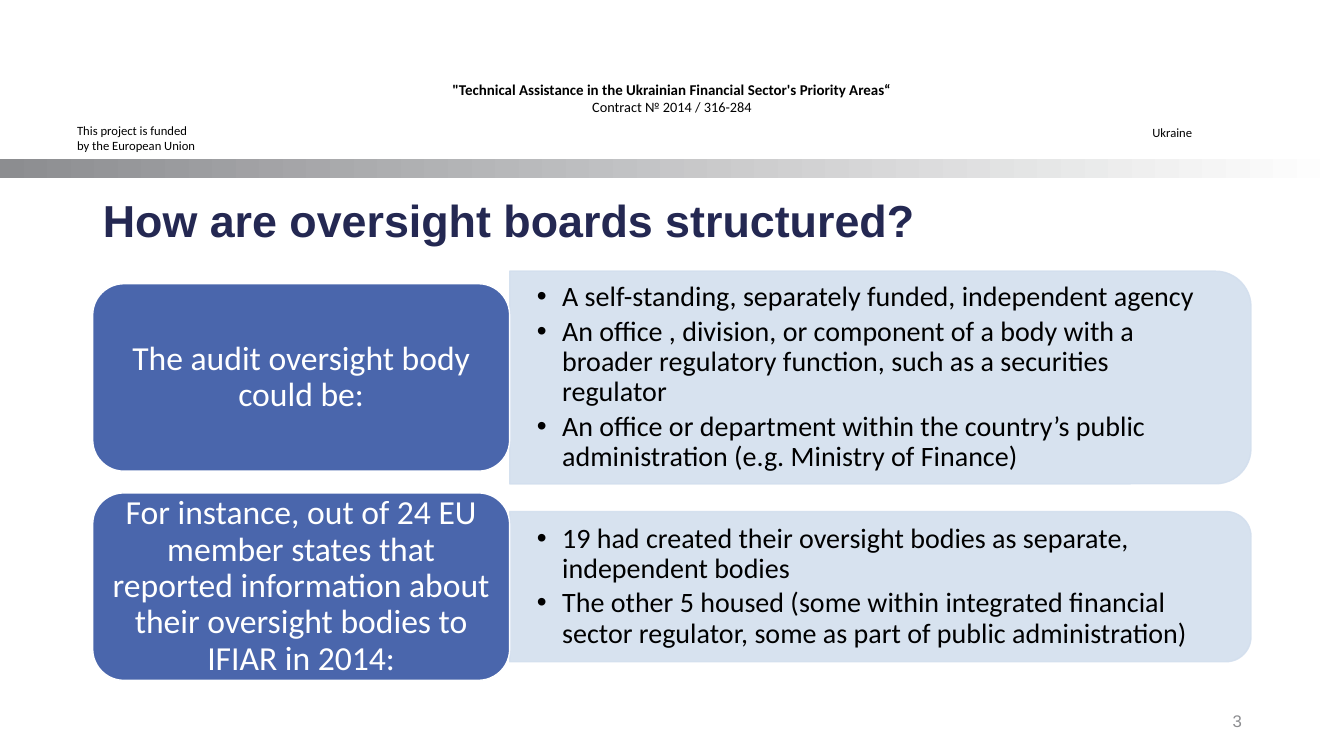
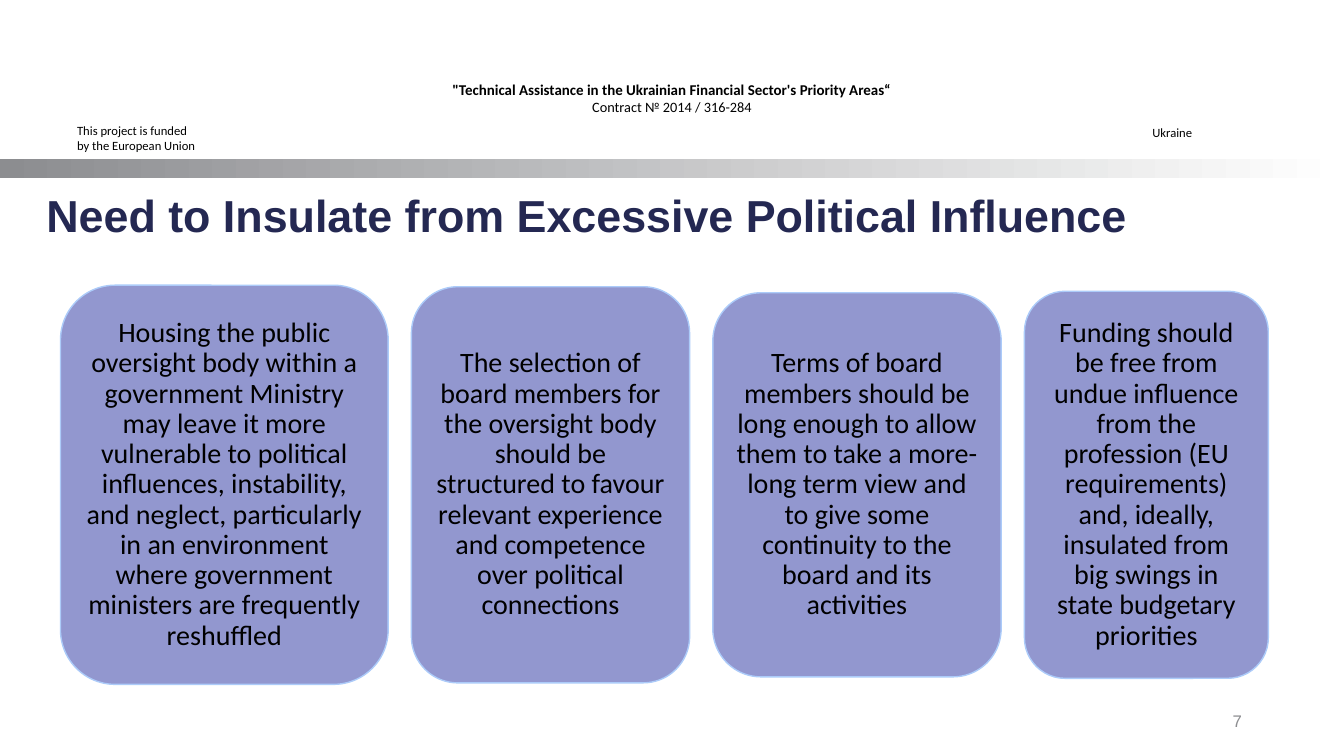
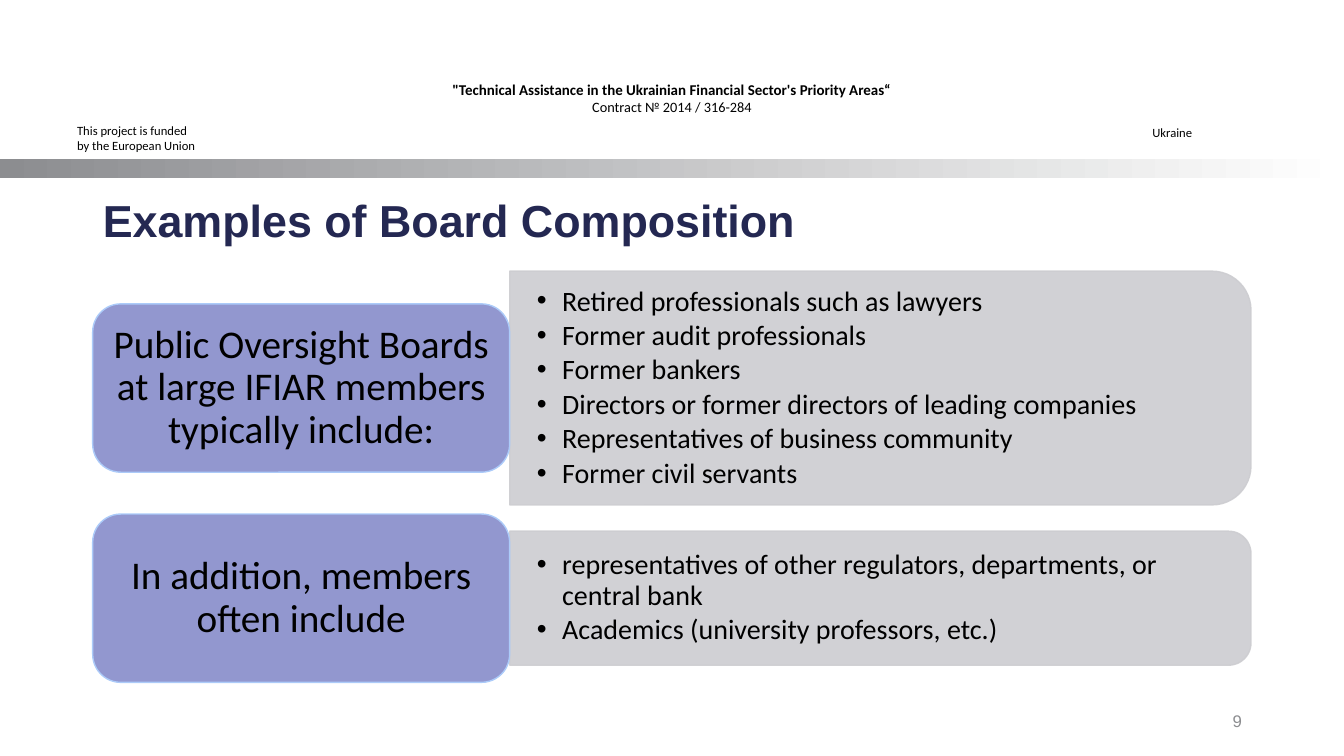
from dataclasses import dataclass

from lxml.etree import SubElement
from pptx import Presentation
from pptx.dml.color import RGBColor
from pptx.enum.shapes import MSO_SHAPE
from pptx.enum.text import MSO_ANCHOR, PP_ALIGN
from pptx.oxml.ns import qn
from pptx.util import Inches, Pt

SLIDE_WIDTH, SLIDE_HEIGHT = Inches(13.33), Inches(7.5)
COLORS = {
    "white": "FFFFFF", "black": "000000", "gray": "8C8D90", "navy": "242852",
    "blue": "4A66AC", "pale_blue": "D3DFEE", "violet": "9297CF",
    "sky": "ACCBF9", "silver": "CDCDD1",
}
STYLES = {
    "title": {"name": "Arial", "size": Pt(32), "bold": True, "color": "navy"},
    "number": {"name": "Arial", "size": Pt(12), "color": "gray"},
    "project": {"name": "Calibri", "size": Pt(10.7), "bold": True, "color": "black"},
    "contract": {"name": "Calibri", "size": Pt(10.2), "color": "black"},
    "note": {"name": "Calibri", "size": Pt(9), "color": "black"},
    "body": {"name": "Calibri", "size": Pt(20), "color": "black"},
    "label_white": {"name": "Calibri", "size": Pt(24), "color": "white"},
    "label_black": {"name": "Calibri", "size": Pt(28), "color": "black"},
}


@dataclass
class Box:
    """Hold a rectangle in percent of the slide's width and height."""
    left: float
    top: float
    width: float
    height: float

    def lengths(self):
        """Return left, top, width and height as slide lengths."""
        sides = (SLIDE_WIDTH, SLIDE_HEIGHT) * 2
        shares = (self.left, self.top, self.width, self.height)
        return [int(side * share / 100) for side, share in zip(sides, shares)]


DIAGRAM = Box(6.9, 35.87, 86.18, 54.27)
CARD_ROW = Box(4.5, 37.73, 89.87, 52.8)
TITLE = Box(6.9, 23.2, 86.25, 12.67)
HIGH_TITLE = Box(2.7, 22.53, 86.25, 12.67)


def rgb(name):
    """Return the named colour."""
    return RGBColor.from_string(COLORS[name])


def apply_formats(target, formats):
    """Set each attribute of the target from a dict."""
    for name, value in formats.items():
        if name == "color":
            target.color.rgb = rgb(value)
        else:
            setattr(target, name, value)


def set_frame(frame, anchor=MSO_ANCHOR.MIDDLE, across=0.1, down=0.05, right=None):
    """Set wrapping, anchor and margins of a text frame."""
    apply_formats(frame, {
        "word_wrap": True, "vertical_anchor": anchor,
        "margin_left": Inches(across), "margin_right": Inches(right or across),
        "margin_top": Inches(down), "margin_bottom": Inches(down),
    })


def write_lines(frame, lines, align=PP_ALIGN.LEFT, spacing=1.0, bullets=False):
    """Write one paragraph for each pair of text and style name."""
    for index, (text, style) in enumerate(lines):
        paragraph = frame.paragraphs[0] if index == 0 else frame.add_paragraph()
        if bullets:
            properties = paragraph._p.get_or_add_pPr()
            properties.set("marL", str(Inches(0.25)))
            properties.set("indent", str(-Inches(0.25)))
            SubElement(properties, qn("a:buFont")).set("typeface", "Arial")
            SubElement(properties, qn("a:buChar")).set("char", "•")
            if index:
                paragraph.space_before = Pt(3)
        apply_formats(paragraph, {"alignment": align, "line_spacing": spacing})
        run = paragraph.add_run()
        run.text = text
        apply_formats(run.font, STYLES[style])


def add_text(slide, box, lines, align=PP_ALIGN.LEFT, anchor=MSO_ANCHOR.TOP):
    """Add a plain text box."""
    frame = slide.shapes.add_textbox(*box.lengths()).text_frame
    set_frame(frame, anchor)
    write_lines(frame, lines, align)


def add_rounded(slide, box, text, style, fill, line, across=0.1, down=0.05):
    """Add a rounded rectangle with centred text."""
    shape = slide.shapes.add_shape(MSO_SHAPE.ROUNDED_RECTANGLE, *box.lengths())
    shape.shadow.inherit = False
    shape.fill.solid()
    shape.fill.fore_color.rgb = rgb(fill)
    apply_formats(shape.line, {"color": line, "width": Pt(1)})
    set_frame(shape.text_frame, across=across, down=down)
    write_lines(shape.text_frame, [(text, style)], PP_ALIGN.CENTER, 0.9)


def add_panel(slide, box, bullets, color):
    """Add a panel rounded on its right side, with a bulleted list on it."""
    left, top, width, height = box.lengths()
    shift = (width - height) // 2
    shape = slide.shapes.add_shape(MSO_SHAPE.ROUND_2_SAME_RECTANGLE,
                                   left + shift, top - shift, height, width)
    shape.rotation = 90
    shape.shadow.inherit = False
    shape.fill.solid()
    shape.fill.fore_color.rgb = rgb(color)
    apply_formats(shape.line, {"color": color, "width": Pt(1)})
    for tint in shape._element.spPr.iter(qn("a:srgbClr")):
        SubElement(tint, qn("a:alpha")).set("val", "90000")
    frame = slide.shapes.add_textbox(left, top, width, height).text_frame
    set_frame(frame, across=0.27, down=0.14, right=0.36)
    write_lines(frame, [(text, "body") for text in bullets], spacing=0.9, bullets=True)


def add_diagram(slide, box, rows, label_height, label_format, panel_color):
    """Stack rows, each a label on the left and a panel on the right."""
    label_width = box.width * 0.36
    top = box.top
    for label, panel_height, bullets in rows:
        row_height = max(label_height, panel_height)
        middle = top + row_height / 2
        panel = Box(box.left + label_width, middle - panel_height / 2,
                    box.width - label_width, panel_height)
        add_panel(slide, panel, bullets, panel_color)
        label_box = Box(box.left, middle - label_height / 2, label_width, label_height)
        add_rounded(slide, label_box, label, **label_format)
        top += row_height + 1.2


def add_cards(slide, box, cards):
    """Set cards side by side, with equal gaps and a common middle line."""
    gap = (box.width - sum(width for width, _, _ in cards)) / (len(cards) - 1)
    left = box.left
    for width, height, text in cards:
        card = Box(left, box.top + (box.height - height) / 2, width, height)
        add_rounded(slide, card, text, "body", "violet", "sky", 0.08, 0.08)
        left += width + gap


def add_page(presentation, title, number, title_box=TITLE):
    """Add a slide with its header, band, title and number."""
    slide = presentation.slides.add_slide(presentation.slide_layouts[5])
    band = slide.shapes.add_shape(MSO_SHAPE.RECTANGLE, *Box(0, 21.07, 100, 2.53).lengths())
    band.shadow.inherit = False
    band.line.fill.background()
    band.fill.gradient()
    band.fill.gradient_angle = 0
    for stop, color in zip(band.fill.gradient_stops, ("gray", "white")):
        stop.color.rgb = rgb(color)
    add_text(slide, Box(5, 10.27, 90, 5.33), [
        ("\"Technical Assistance in the Ukrainian Financial Sector's Priority Areas“", "project"),
        ("Contract № 2014 / 316-284", "contract"),
    ], PP_ALIGN.CENTER, MSO_ANCHOR.MIDDLE)
    add_text(slide, Box(5, 15.6, 12, 5.33),
             [("This project is funded", "note"), ("by the European Union", "note")])
    add_text(slide, Box(85, 15.87, 6, 3.33), [("Ukraine", "note")])
    add_text(slide, Box(70.65, 92.67, 22.5, 5.33), [(str(number), "number")],
             PP_ALIGN.RIGHT, MSO_ANCHOR.MIDDLE)
    heading = slide.shapes.title
    sides = ("left", "top", "width", "height")
    apply_formats(heading, dict(zip(sides, title_box.lengths())))
    set_frame(heading.text_frame)
    write_lines(heading.text_frame, [(title, "title")], spacing=0.9)
    return slide


def build_structure(presentation):
    """Build the slide on how oversight boards are structured."""
    slide = add_page(presentation, "How are oversight boards structured?", 3)
    rows = [
        ("The audit oversight body could be:", 28.13, [
            "A self-standing, separately funded, independent agency",
            "An office , division, or component of a body with a broader regulatory "
            "function, such as a securities regulator",
            "An office or department within the country’s public administration "
            "(e.g. Ministry of Finance)",
        ]),
        ("For instance, out of 24 EU member states that reported information about "
         "their oversight bodies to IFIAR in 2014:", 19.87, [
             "19 had created their oversight bodies as separate, independent bodies",
             "The other 5 housed (some within integrated financial sector regulator, "
             "some as part of public administration)",
         ]),
    ]
    label_format = {"style": "label_white", "fill": "blue", "line": "white"}
    add_diagram(slide, DIAGRAM, rows, 24.8, label_format, "pale_blue")


def build_influence(presentation):
    """Build the slide on political influence."""
    slide = add_page(presentation, "Need to Insulate from Excessive Political Influence",
                     7, HIGH_TITLE)
    add_cards(slide, CARD_ROW, [
        (24.38, 52.8, "Housing the public oversight body within a government Ministry may "
         "leave it more vulnerable to political influences, instability, and neglect, "
         "particularly in an environment where government ministers are frequently "
         "reshuffled"),
        (20.7, 52.4, "The selection of board members for the oversight body should be "
         "structured to favour relevant experience and competence over political "
         "connections"),
        (21.45, 50.8, "Terms of board members should be long enough to allow them to take "
         "a more-long term view and to give some continuity to the board and its "
         "activities"),
        (18.15, 51.2, "Funding should be free from undue influence from the profession "
         "(EU requirements) and, ideally, insulated from big swings in state budgetary "
         "priorities"),
    ])


def build_composition(presentation):
    """Build the slide on board composition."""
    slide = add_page(presentation, "Examples of Board Composition", 9)
    rows = [
        ("Public Oversight Boards at large IFIAR members typically include:", 30.93, [
            "Retired professionals such as lawyers",
            "Former audit professionals",
            "Former bankers",
            "Directors or former directors of leading companies",
            "Representatives of business community",
            "Former civil servants",
        ]),
        ("In addition, members often include", 17.73, [
            "representatives of other regulators, departments, or central bank",
            "Academics (university professors, etc.)",
        ]),
    ]
    label_format = {"style": "label_black", "fill": "violet", "line": "sky",
                    "across": 0.12, "down": 0.06}
    add_diagram(slide, DIAGRAM, rows, 22.27, label_format, "silver")


def main():
    """Build and save the presentation."""
    presentation = Presentation()
    apply_formats(presentation, {"slide_width": SLIDE_WIDTH, "slide_height": SLIDE_HEIGHT})
    for build in (build_structure, build_influence, build_composition):
        build(presentation)
    presentation.save("out.pptx")


if __name__ == "__main__":
    main()
